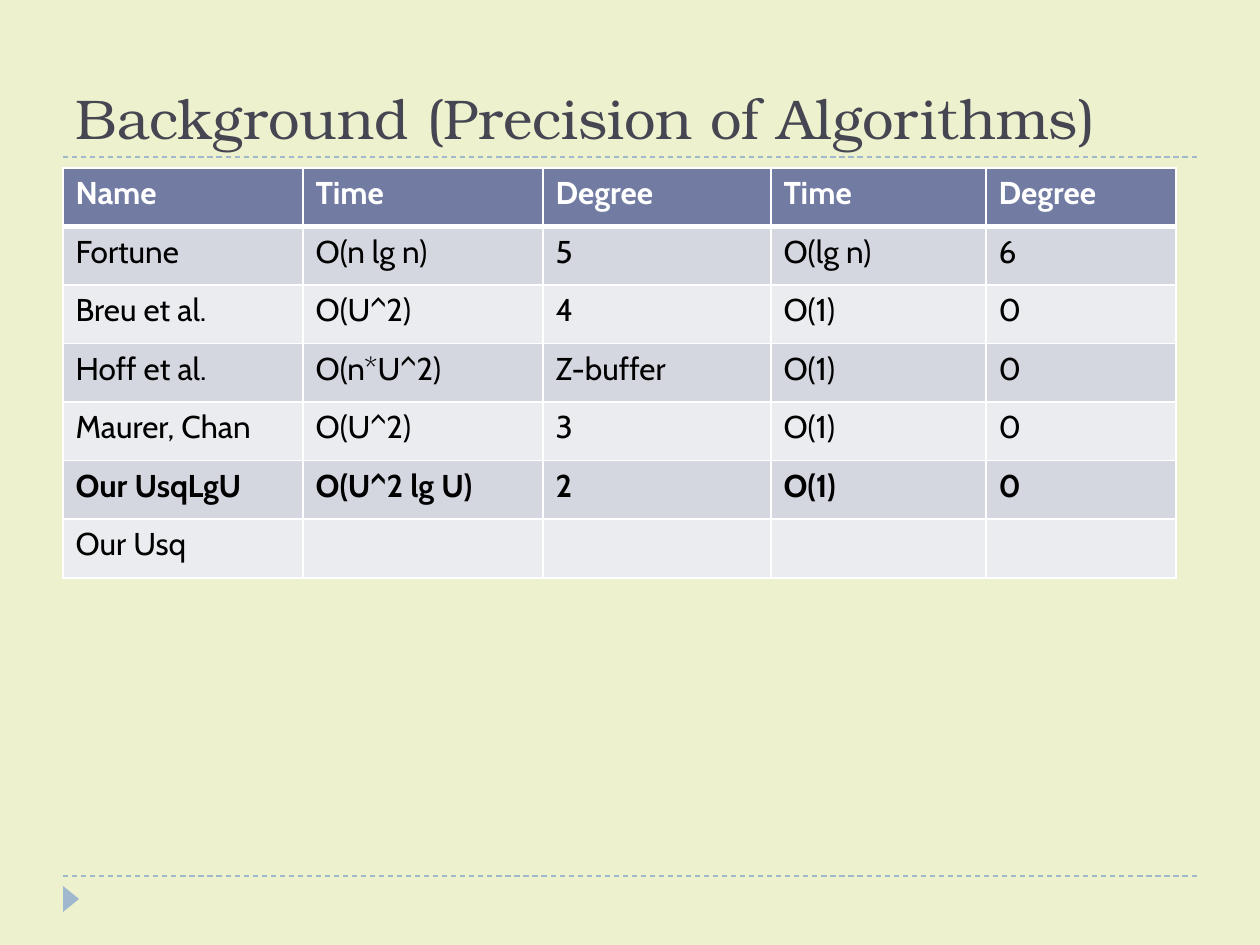
from dataclasses import dataclass

import lxml.etree
import pptx
import pptx.dml.color
import pptx.enum.dml
import pptx.enum.shapes
import pptx.enum.text
import pptx.oxml.ns
import pptx.util


@dataclass(frozen=True)
class Theme:
    background: str = "EEF1CD"
    accent: str = "9FB8CD"
    title: str = "464653"
    header: str = "727CA3"
    header_text: str = "FFFFFF"
    body_text: str = "000000"
    bands: tuple = ("D5D7E0", "EBECF0")
    border: str = "FFFFFF"
    title_font: str = "TeX Gyre Bonum"
    body_font: str = "Cabin"
    title_size: int = 32
    body_size: int = 18


THEME = Theme()
PIXELS_PER_INCH = 126
LEFT = 63
CONTENT_WIDTH = 1134
RULE_TOPS = (157, 876)
COLUMN_WIDTHS = (240, 240, 228, 215, 190)
TABLE_TOP = 168
TABLE_HEIGHT = 410
BOLD_ROWS = ("Name", "Our UsqLgU")
ALGORITHMS = (
    ("Name", "Time", "Degree", "Time", "Degree"),
    ("Fortune", "O(n lg n)", "5", "O(lg n)", "6"),
    ("Breu et al.", "O(U^2)", "4", "O(1)", "0"),
    ("Hoff et al.", "O(n*U^2)", "Z-buffer", "O(1)", "0"),
    ("Maurer, Chan", "O(U^2)", "3", "O(1)", "0"),
    ("Our UsqLgU", "O(U^2 lg U)", "2", "O(1)", "0"),
    ("Our Usq", "", "", "", ""),
)


def px(pixels):
    return pptx.util.Emu(round(pixels * 914400 / PIXELS_PER_INCH))


def box(*pixels):
    return [px(value) for value in pixels]


def set_fill(fill, color):
    fill.solid()
    fill.fore_color.rgb = pptx.dml.color.RGBColor.from_string(color)


def format_text(text_frame, font, size, color, bold=False):
    for paragraph in text_frame.paragraphs:
        for run in paragraph.runs:
            run.font.name = font
            run.font.size = pptx.util.Pt(size)
            run.font.bold = bold
            run.font.color.rgb = pptx.dml.color.RGBColor.from_string(color)


def add_title(slide, text):
    title = slide.shapes.title
    title.left, title.top, title.width, title.height = box(LEFT, 21, CONTENT_WIDTH, 136)
    text_frame = title.text_frame
    text_frame.text = text
    text_frame.word_wrap = True
    text_frame.auto_size = pptx.enum.text.MSO_AUTO_SIZE.NONE
    text_frame.vertical_anchor = pptx.enum.text.MSO_ANCHOR.BOTTOM
    text_frame.paragraphs[0].alignment = pptx.enum.text.PP_ALIGN.LEFT
    format_text(text_frame, THEME.title_font, THEME.title_size, THEME.title)


def add_rule(slide, top):
    rule = slide.shapes.add_connector(
        pptx.enum.shapes.MSO_CONNECTOR.STRAIGHT,
        *box(LEFT, top, LEFT + CONTENT_WIDTH, top),
    )
    set_fill(rule.line.fill, THEME.accent)
    rule.line.width = pptx.util.Pt(0.75)
    rule.line.dash_style = pptx.enum.dml.MSO_LINE.DASH
    properties = rule._element.spPr
    lxml.etree.SubElement(properties, pptx.oxml.ns.qn("a:effectLst"))


def add_page_marker(slide):
    marker = slide.shapes.add_shape(
        pptx.enum.shapes.MSO_SHAPE.ISOSCELES_TRIANGLE, *box(58, 891, 26, 16)
    )
    marker.rotation = 90
    marker.shadow.inherit = False
    set_fill(marker.fill, THEME.accent)
    marker.line.fill.background()


def set_borders(cell, widths):
    properties = cell._tc.get_or_add_tcPr()
    for side, width in widths.items():
        line = lxml.etree.SubElement(
            properties, pptx.oxml.ns.qn(f"a:ln{side}"), w=str(pptx.util.Pt(width))
        )
        fill = lxml.etree.SubElement(line, pptx.oxml.ns.qn("a:solidFill"))
        lxml.etree.SubElement(fill, pptx.oxml.ns.qn("a:srgbClr"), val=THEME.border)


def format_cell(cell, text, row_index, bold):
    is_header = row_index == 0
    set_borders(
        cell,
        {"L": 1, "R": 1, "T": 3 if row_index == 1 else 1, "B": 3 if is_header else 1},
    )
    set_fill(cell.fill, THEME.header if is_header else THEME.bands[(row_index - 1) % 2])
    cell.text_frame.text = text
    color = THEME.header_text if is_header else THEME.body_text
    format_text(cell.text_frame, THEME.body_font, THEME.body_size, color, bold)


def add_algorithm_table(slide):
    table = slide.shapes.add_table(
        len(ALGORITHMS),
        len(COLUMN_WIDTHS),
        *box(LEFT, TABLE_TOP, sum(COLUMN_WIDTHS), TABLE_HEIGHT),
    ).table
    for column, width in zip(table.columns, COLUMN_WIDTHS):
        column.width = px(width)
    for row_index, values in enumerate(ALGORITHMS):
        for column_index, text in enumerate(values):
            cell = table.cell(row_index, column_index)
            format_cell(cell, text, row_index, values[0] in BOLD_ROWS)


def main():
    presentation = pptx.Presentation()
    presentation.slide_width, presentation.slide_height = box(1260, 945)
    slide = presentation.slides.add_slide(presentation.slide_layouts[5])
    set_fill(slide.background.fill, THEME.background)
    for top in RULE_TOPS:
        add_rule(slide, top)
    add_page_marker(slide)
    add_title(slide, "Background (Precision of Algorithms)")
    add_algorithm_table(slide)
    presentation.save("out.pptx")


if __name__ == "__main__":
    main()
